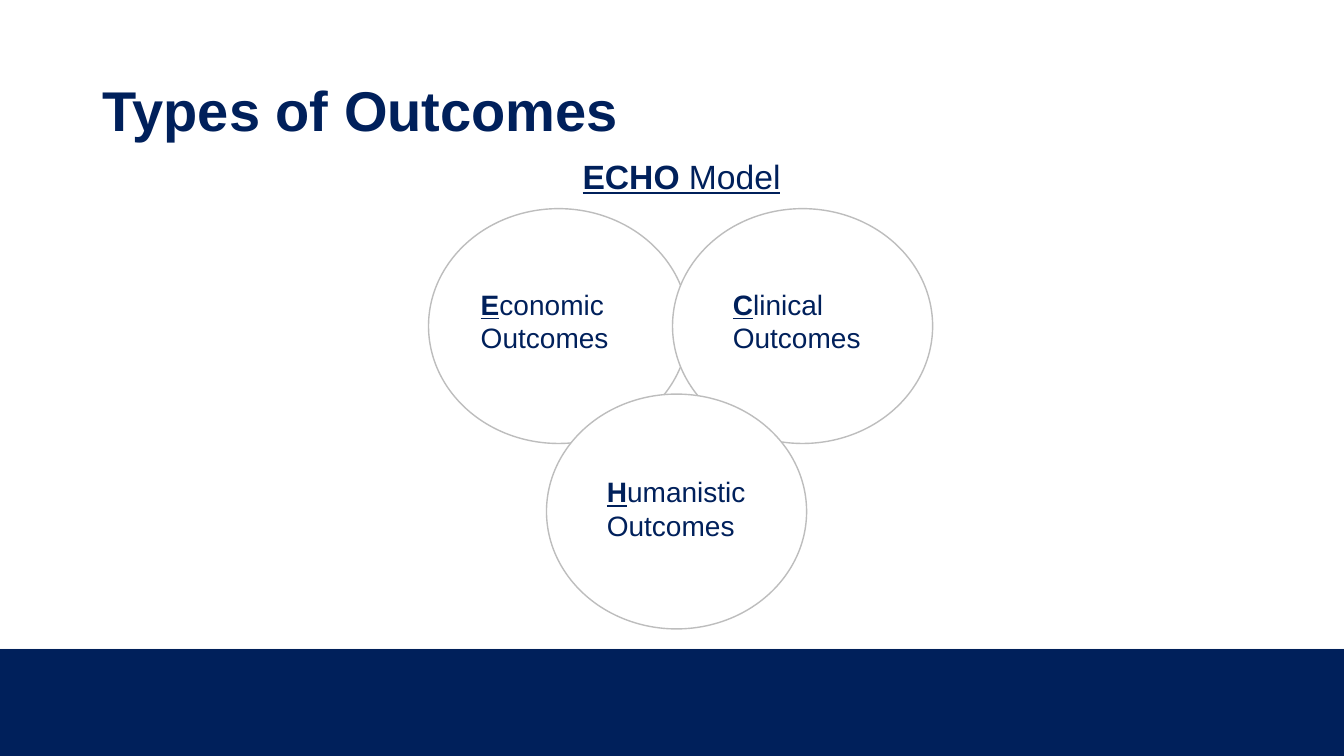
"""Build the Types of Outcomes slide showing the three circles of the ECHO model."""
from dataclasses import dataclass

from pptx import Presentation
from pptx.dml.color import RGBColor
from pptx.enum.shapes import MSO_SHAPE
from pptx.enum.text import MSO_ANCHOR, PP_ALIGN
from pptx.util import Emu, Pt

RECTANGLE, OVAL = MSO_SHAPE.RECTANGLE, MSO_SHAPE.OVAL
TOP, MIDDLE = MSO_ANCHOR.TOP, MSO_ANCHOR.MIDDLE
LEFT, CENTER = PP_ALIGN.LEFT, PP_ALIGN.CENTER

EMU_PER_PX = 9144
SLIDE_WIDTH, SLIDE_HEIGHT = 1333, 750
CIRCLE_WIDTH, CIRCLE_HEIGHT = 258, 233
LABEL_WIDTH, LABEL_HEIGHT = 167, 77
FONT = "Arial"
COLORS = {"navy": "00205B", "white": "FFFFFF", "edge": "F8F8F8", "outline": "BDBDBD"}


@dataclass(frozen=True)
class Box:
    left: int
    top: int
    width: int
    height: int

    def emu(self) -> list[Emu]:
        return [Emu(value * EMU_PER_PX)
                for value in (self.left, self.top, self.width, self.height)]


@dataclass(frozen=True)
class Run:
    text: str
    bold: bool = False
    underline: bool = False


@dataclass(frozen=True)
class Outcome:
    initial: str
    rest: str
    circle_left: int
    circle_top: int
    label_left: int
    label_top: int


OUTCOMES = [
    Outcome("E", "conomic Outcomes", 425, 207, 467, 280),
    Outcome("C", "linical Outcomes", 667, 207, 717, 280),
    Outcome("H", "umanistic Outcomes", 542, 391, 592, 466),
]


def color(name: str) -> RGBColor:
    return RGBColor.from_string(COLORS[name])


def add_filled_shape(slide, kind, box: Box, fill: str, outline: str | None = None) -> None:
    shape = slide.shapes.add_shape(kind, *box.emu())
    shape.shadow.inherit = False
    shape.fill.solid()
    shape.fill.fore_color.rgb = color(fill)
    if outline:
        shape.line.color.rgb = color(outline)
        shape.line.width = Pt(1)
    else:
        shape.line.fill.background()


def add_text(slide, box: Box, runs: list[Run], *, size: int, align=LEFT,
             anchor=TOP, line_spacing: float = 1.0) -> None:
    frame = slide.shapes.add_textbox(*box.emu()).text_frame
    frame.word_wrap = True
    frame.vertical_anchor = anchor
    paragraph = frame.paragraphs[0]
    paragraph.alignment = align
    paragraph.line_spacing = line_spacing
    for item in runs:
        run = paragraph.add_run()
        run.text = item.text
        run.font.name = FONT
        run.font.size = Pt(size)
        run.font.bold = item.bold
        run.font.underline = item.underline
        run.font.color.rgb = color("navy")


def main() -> None:
    presentation = Presentation()
    presentation.slide_width = Emu(SLIDE_WIDTH * EMU_PER_PX)
    presentation.slide_height = Emu(SLIDE_HEIGHT * EMU_PER_PX)
    slide = presentation.slides.add_slide(presentation.slide_layouts[6])

    for top, fill in ((643, "edge"), (644, "navy")):
        band = Box(0, top, SLIDE_WIDTH, SLIDE_HEIGHT - top)
        add_filled_shape(slide, RECTANGLE, band, fill)

    add_text(slide, Box(92, 40, 1150, 145), [Run("Types of Outcomes", bold=True)],
             size=40, anchor=MIDDLE, line_spacing=0.9)
    add_text(slide, Box(101, 154, 1150, 48),
             [Run("ECHO ", bold=True, underline=True), Run("Model", underline=True)],
             size=24, align=CENTER, line_spacing=0.9)

    for outcome in OUTCOMES:
        circle = Box(outcome.circle_left, outcome.circle_top, CIRCLE_WIDTH, CIRCLE_HEIGHT)
        add_filled_shape(slide, OVAL, circle, "white", "outline")
    for outcome in OUTCOMES:
        label = Box(outcome.label_left, outcome.label_top, LABEL_WIDTH, LABEL_HEIGHT)
        add_text(slide, label,
                 [Run(outcome.initial, bold=True, underline=True), Run(outcome.rest)],
                 size=20)

    presentation.save("out.pptx")


if __name__ == "__main__":
    main()
